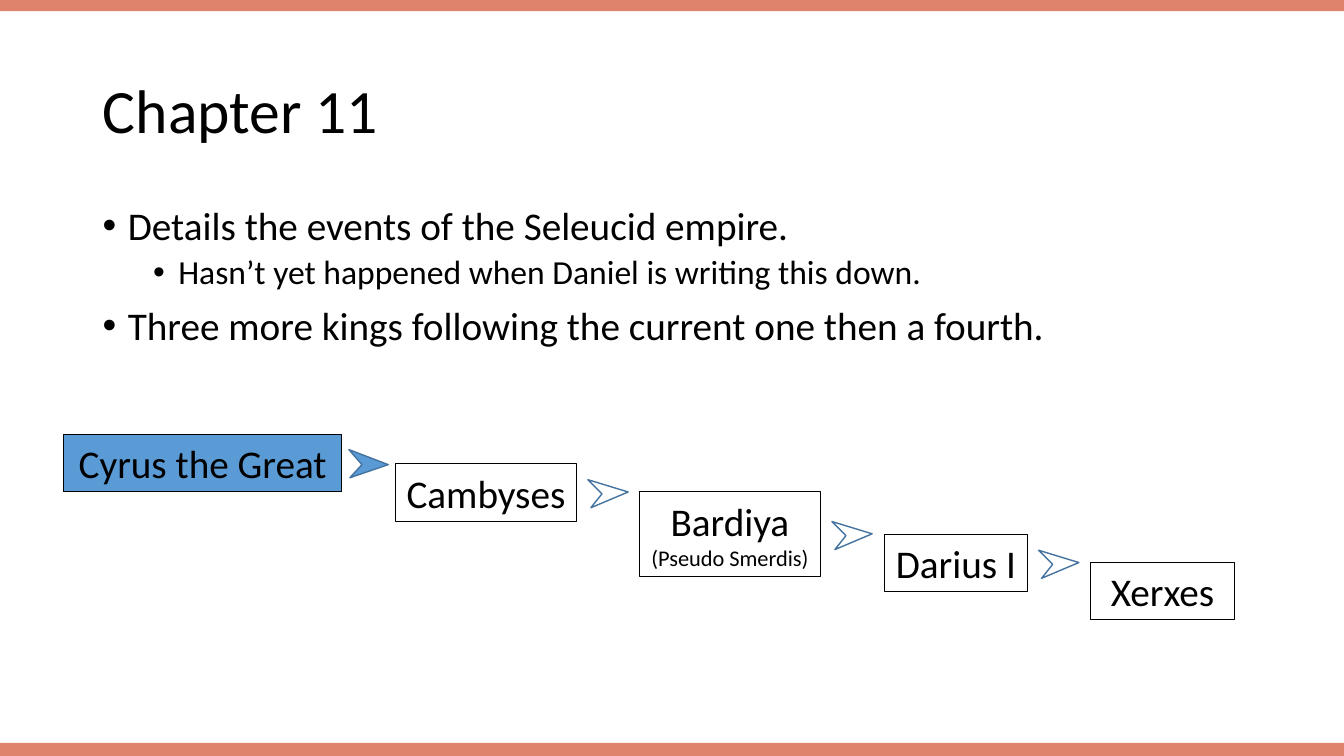
from dataclasses import dataclass

from lxml import etree
from pptx import Presentation
from pptx.dml.color import RGBColor
from pptx.enum.shapes import MSO_SHAPE as Shape
from pptx.enum.text import MSO_ANCHOR as Anchor, MSO_AUTO_SIZE as AutoSize, PP_ALIGN as Align
from pptx.oxml.ns import qn
from pptx.util import Inches, Pt


@dataclass(frozen=True)
class Theme:
    font: str = "Calibri"
    text: str = "000000"
    band: str = "D24726"
    band_alpha: int = 67
    current: str = "5B9BD5"
    arrow_line: str = "43739E"
    title_size: int = 44
    body_size: int = 28
    sub_size: int = 24
    note_size: int = 16


class SlideBuilder:
    def __init__(self, prs, theme):
        self.theme = theme
        self.slide = prs.slides.add_slide(prs.slide_layouts[5])

    def style_text(self, p, size):
        for r in p.runs:
            r.font.name = self.theme.font
            r.font.size = Pt(size)
            r.font.color.rgb = RGBColor.from_string(self.theme.text)

    def style_shape(self, s, fill=None, line=None, width=1):
        """Remove the shadow; a fill or line of None means none is drawn."""
        s.shadow.inherit = False
        for fmt, color in ((s.fill, fill), (s.line.fill, line)):
            if color:
                fmt.solid()
                fmt.fore_color.rgb = RGBColor.from_string(color)
            else:
                fmt.background()
        if line:
            s.line.width = Pt(width)

    def band(self, top, height):
        s = self.slide.shapes.add_shape(
            Shape.RECTANGLE, 0, Inches(top), Inches(13.33), Inches(height))
        self.style_shape(s, fill=self.theme.band)
        color = s.fill._xPr.find(qn("a:solidFill"))[0]
        etree.SubElement(color, qn("a:alpha"), val=str(self.theme.band_alpha * 1000))

    def title(self, text, left, top, width, height):
        s = self.slide.shapes.title
        s.left, s.top, s.width, s.height = map(Inches, (left, top, width, height))
        tf = s.text_frame
        tf.text = text
        tf.auto_size = AutoSize.NONE
        tf.vertical_anchor = Anchor.MIDDLE
        p = tf.paragraphs[0]
        p.alignment = Align.LEFT
        p.line_spacing = 0.9
        self.style_text(p, self.theme.title_size)

    def bullets(self, items, left, top, width, height):
        """Write (level, text) items as a bulleted list."""
        s = self.slide.shapes.add_textbox(*map(Inches, (left, top, width, height)))
        tf = s.text_frame
        tf.word_wrap = True
        for i, (level, text) in enumerate(items):
            p = tf.paragraphs[0] if i == 0 else tf.add_paragraph()
            p.text = text
            p.level = level
            p.line_spacing = 0.9
            p.space_before = Pt(0 if i == 0 else 5 if level else 10)
            pPr = p._p.get_or_add_pPr()
            pPr.set("marL", str(Inches(0.25 + 0.5 * level)))
            pPr.set("indent", str(Inches(-0.25)))
            etree.SubElement(pPr, qn("a:buFont"), typeface="Arial")
            etree.SubElement(pPr, qn("a:buChar"), char="•")
            self.style_text(p, self.theme.sub_size if level else self.theme.body_size)

    def king(self, text, left, top, width, height, fill=None):
        """Add a king's box; a second line of text is set as a small note."""
        s = self.slide.shapes.add_shape(
            Shape.RECTANGLE, *map(Inches, (left, top, width, height)))
        self.style_shape(s, fill, self.theme.text, 0.75)
        tf = s.text_frame
        tf.text = text
        tf.word_wrap = True
        tf.auto_size = AutoSize.SHAPE_TO_FIT_TEXT
        for p, size in zip(tf.paragraphs, (self.theme.body_size, self.theme.note_size)):
            p.alignment = Align.CENTER
            self.style_text(p, size)

    def arrow(self, left, top, fill=None, rotation=0):
        outline = [(Inches(left + x), Inches(top + y))
                   for x, y in ((0.01, 0.28), (0.13, 0.15), (0, 0), (0.39, 0.15))]
        builder = self.slide.shapes.build_freeform(*outline[0])
        builder.add_line_segments(outline[1:], close=True)
        s = builder.convert_to_shape()
        s.rotation = rotation
        self.style_shape(s, fill, self.theme.arrow_line)


def main():
    prs = Presentation()
    prs.slide_width, prs.slide_height = Inches(13.33), Inches(7.5)
    theme = Theme()
    page = SlideBuilder(prs, theme)

    page.band(0, 0.11)
    page.band(7.37, 0.13)
    page.title("Chapter 11", 0.92, 0.4, 11.5, 1.45)
    page.bullets([
        (0, "Details the events of the Seleucid empire."),
        (1, "Hasn’t yet happened when Daniel is writing this down."),
        (0, "Three more kings following the current one then a fourth."),
    ], 0.92, 2, 11.5, 1.86)

    page.king("Cyrus the Great", 0.63, 4.31, 2.76, 0.57, theme.current)
    page.arrow(3.46, 4.46, theme.current)
    successors = [
        ("Cambyses", 3.92, 4.6, 1.8, 0.57),
        ("Bardiya\n(Pseudo Smerdis)", 6.34, 4.88, 1.8, 0.84),
        ("Darius I", 8.77, 5.3, 1.42, 0.57),
        ("Xerxes", 10.82, 5.58, 1.42, 0.57),
    ]
    for king in successors:
        page.king(*king)
    for _, left, top, width, height in successors[:-1]:
        page.arrow(left + width + 0.12, top + height / 2 - 0.14, rotation=356)

    prs.save("out.pptx")


if __name__ == "__main__":
    main()
